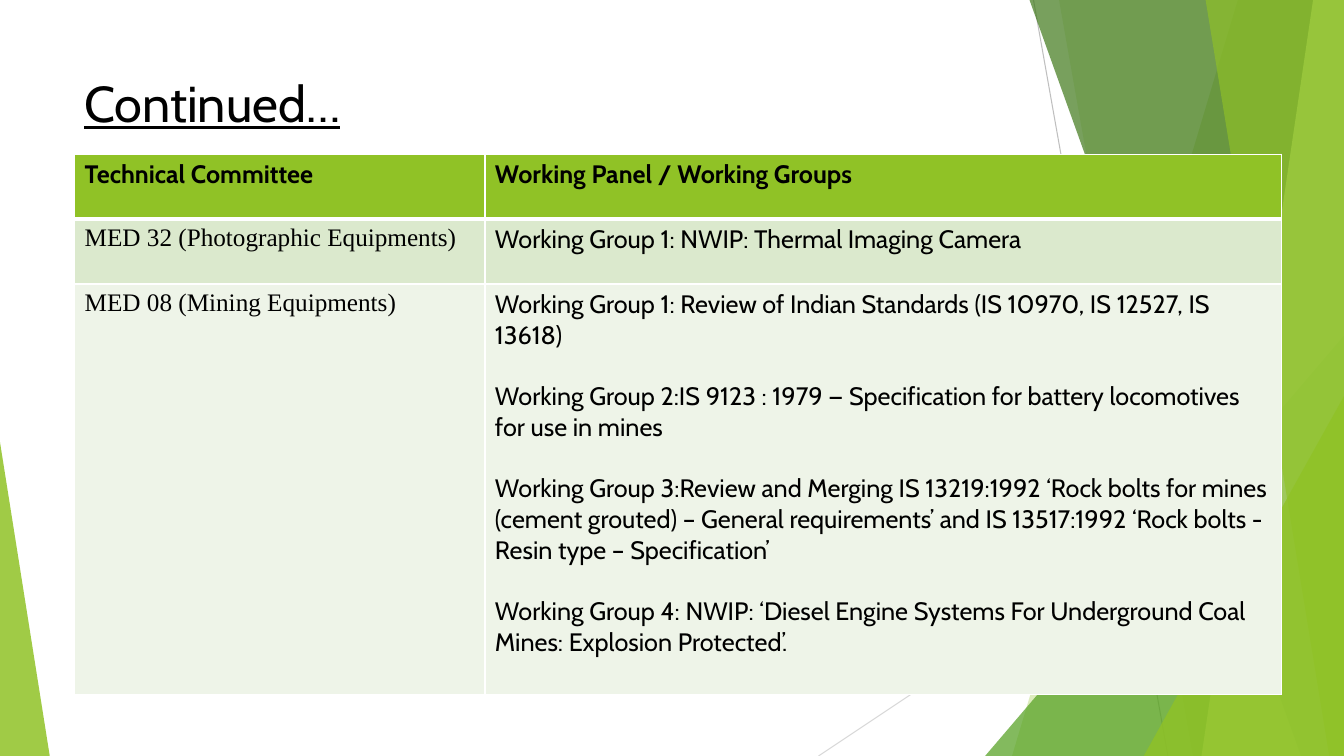
from lxml import etree
from pptx import Presentation, util as u
from pptx.dml.color import RGBColor
from pptx.enum import shapes, text
from pptx.oxml.ns import qn

WIDE, HIGH = u.Inches(13.33), u.Inches(7.5)
COL, ROW = WIDE / 100, HIGH / 100

LINES = [(76.9, 0, 86.9, 100, "BFBFBF"), (100, 53.7, 60.9, 100, "D9D9D9")]
BACK = [(92.1, 75.3, "90C226", 30), (78.8, 88.75, "90C226", 20)]
FRONT = [(76.6, 96.8, "3F7819", 70), (97.7, 89.4, "C0E474", 70), (89.7, 98.9, "90C226", 65)]

HEADS = ["Technical Committee", "Working Panel / Working Groups"]
GROUPS = [
    ("MED 32 (Photographic Equipments)", ["Working Group 1: NWIP: Thermal Imaging Camera"]),
    ("MED 08 (Mining Equipments)", [
        "Working Group 1: Review of Indian Standards (IS 10970, IS 12527, IS 13618)",
        "Working Group 2:IS 9123 : 1979 — Specification for battery locomotives for use in mines",
        "Working Group 3:Review and Merging IS 13219:1992 ‘Rock bolts for mines (cement grouted) "
        "– General requirements’ and IS 13517:1992 ‘Rock bolts - Resin type – Specification’",
        "Working Group 4: NWIP: ‘Diesel Engine Systems For Underground Coal Mines: "
        "Explosion Protected’.",
    ]),
]
FILLS = ["90C226", "DBE9CD", "EEF4E8"]
TITLE = {"size": u.Pt(36), "name": "Cabin", "underline": True}
HEAD = {"size": u.Pt(18), "name": "Cabin", "bold": True}
BODY = {"size": u.Pt(18), "name": "Cabin", "bold": False}
SERIF = {**BODY, "name": "Times New Roman"}


def color(code):
    return RGBColor.from_string(code)


def place(x, y):
    return round(x * COL), round(y * ROW)


def paint(shape, code, alpha):
    shape.shadow.inherit = False
    shape.line.fill.background()
    shape.fill.solid()
    shape.fill.fore_color.rgb = color(code)
    tint = shape.fill._xPr.find(".//" + qn("a:srgbClr"))
    etree.SubElement(tint, qn("a:alpha"), val=str(alpha * 1000))


def write(frame, lines, style):
    for i, line in enumerate(lines):
        para = frame.add_paragraph() if i else frame.paragraphs[0]
        para.alignment = text.PP_ALIGN.LEFT
        para.space_before = u.Pt(22 if i else 0)
        run = para.add_run()
        run.text = line
        run.font.color.rgb = color("000000")
        for key, value in style.items():
            setattr(run.font, key, value)


def add_line(slide, x1, y1, x2, y2, code):
    line = slide.shapes.add_connector(
        shapes.MSO_CONNECTOR.STRAIGHT, *place(x1, y1), *place(x2, y2))
    line.line.color.rgb = color(code)
    line.line.width = u.Pt(0.75)
    etree.SubElement(line._element.spPr, qn("a:effectLst"))


def add_strip(slide, top, foot, code, alpha):
    form = slide.shapes.build_freeform(*place(top, 0))
    form.add_line_segments([place(100, 0), place(100, 100), place(foot, 100)])
    paint(form.convert_to_shape(), code, alpha)


def add_peak(slide, x, y, wide, tip, code, alpha):
    peak = slide.shapes.add_shape(
        shapes.MSO_SHAPE.ISOSCELES_TRIANGLE, *place(x, y), *place(wide, 100 - y))
    peak.adjustments[0] = tip
    paint(peak, code, alpha)


def add_decor(slide):
    for line in LINES:
        add_line(slide, *line)
    for strip in BACK:
        add_strip(slide, *strip)
    add_peak(slide, 73.3, 44.4, 26.7, 1, "54A021", 72)
    for strip in FRONT:
        add_strip(slide, *strip)
    add_peak(slide, 85.1, 52.4, 14.9, 1, "90C226", 80)
    add_peak(slide, 0, 58.5, 3.7, 0, "90C226", 85)


def add_title(slide, x, y, wide, high):
    frame = slide.shapes.add_textbox(*place(x, y), *place(wide, high)).text_frame
    frame.word_wrap = True
    frame.vertical_anchor = text.MSO_ANCHOR.TOP
    write(frame, ["Continued…"], TITLE)


def add_edges(cell, head):
    props = cell._tc.get_or_add_tcPr()
    for side in "LRTB":
        width = 3 if head and side == "B" else 1
        edge = etree.SubElement(props, qn("a:ln" + side), w=str(u.Pt(width)))
        fill = etree.SubElement(edge, qn("a:solidFill"))
        etree.SubElement(fill, qn("a:srgbClr"), val="FFFFFF")


def add_grid(slide, x, y, wide, high):
    rows = [([HEADS[0]], [HEADS[1]])] + [([name], work) for name, work in GROUPS]
    table = slide.shapes.add_table(
        len(rows), 2, *place(x, y), *place(wide, high)).table
    for col, share in zip(table.columns, (0.34, 0.66)):
        col.width = round(wide * share * COL)
    for row, share in zip(table.rows, (0.12, 0.12, 0.76)):
        row.height = round(high * share * ROW)
    for r, cells in enumerate(rows):
        for c, lines in enumerate(cells):
            cell = table.cell(r, c)
            add_edges(cell, r == 0)
            cell.fill.solid()
            cell.fill.fore_color.rgb = color(FILLS[r])
            write(cell.text_frame, lines, HEAD if r == 0 else BODY if c else SERIF)


def main():
    deck = Presentation()
    deck.slide_width, deck.slide_height = WIDE, HIGH
    slide = deck.slides.add_slide(deck.slide_layouts[6])
    add_decor(slide)
    add_title(slide, 5.55, 8.9, 70.5, 12.5)
    add_grid(slide, 5.55, 20.4, 89.8, 71.5)
    deck.save("out.pptx")


if __name__ == "__main__":
    main()
